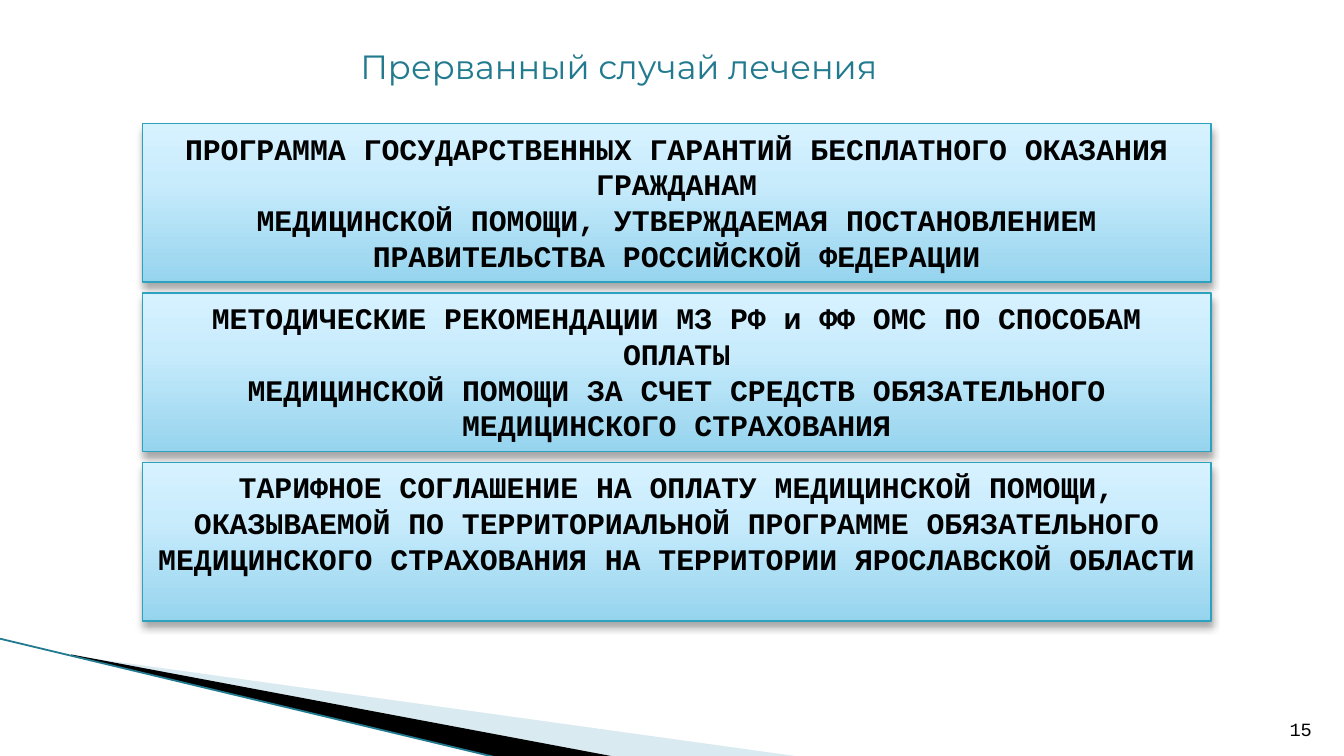
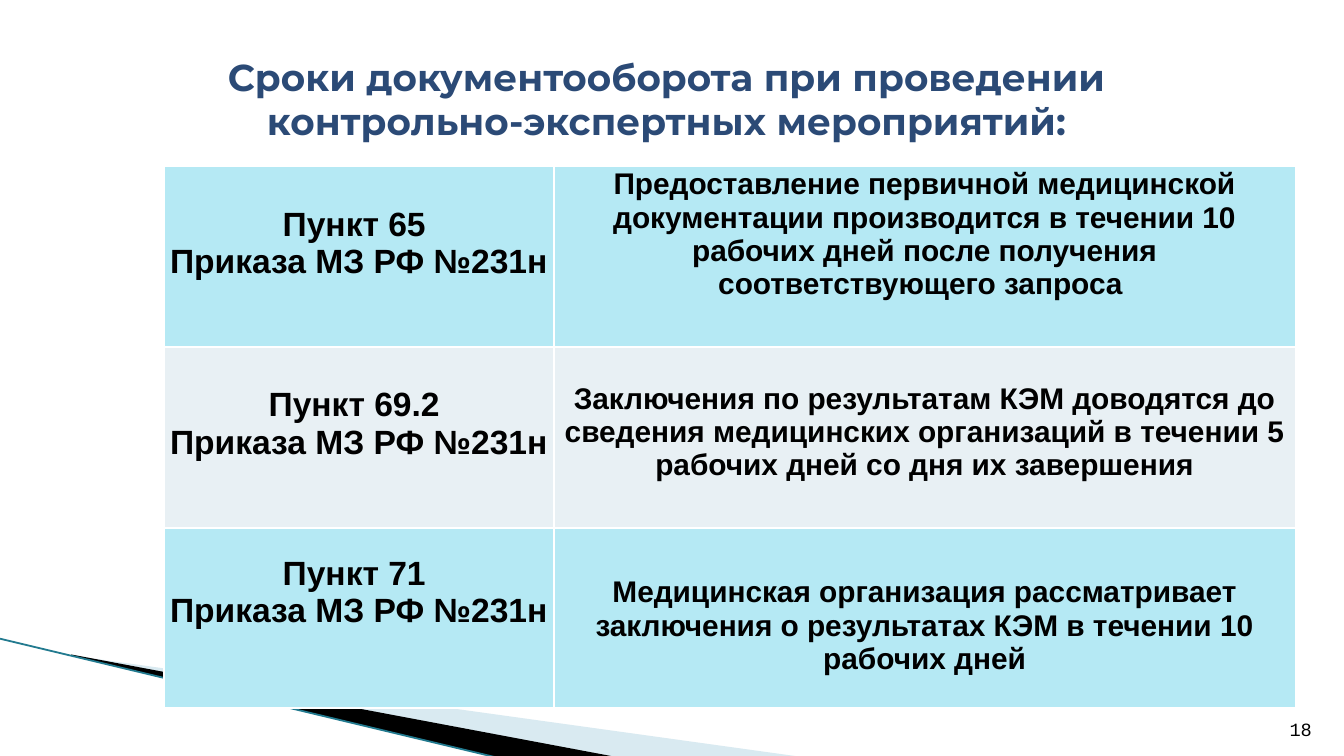
from copy import deepcopy

from lxml import etree
from pptx import Presentation
from pptx.dml.color import RGBColor
from pptx.enum.shapes import MSO_CONNECTOR, MSO_SHAPE
from pptx.enum.text import MSO_ANCHOR, MSO_AUTO_SIZE, PP_ALIGN
from pptx.oxml.ns import qn
from pptx.util import Inches, Pt

CENTER, RIGHT = PP_ALIGN.CENTER, PP_ALIGN.RIGHT
TOP, BOTTOM = MSO_ANCHOR.TOP, MSO_ANCHOR.BOTTOM
NO_AUTOFIT = MSO_AUTO_SIZE.NONE
RECTANGLE = MSO_SHAPE.RECTANGLE
STRAIGHT = MSO_CONNECTOR.STRAIGHT

BLACK, WHITE = "000000", "FFFFFF"
TEAL, NAVY = "227A8F", "2B4A76"
BAND_PALE, BOX_LINE = "A0CBDC", "2DA2BF"
BOX_GRADIENT = [(0, "96D4EE"), (0.65, "C9ECFC"), (1, "D7F2FF")]
ROW_FILLS = ["B5E9F4", "E8F0F4"]
HEADING_FONT, MONO_FONT, TABLE_FONT = "Montserrat", "Courier New", "Arial"

PALE_WEDGE = [(0.55, 4.88), (5.95, 5.63), (4.56, 5.63)]
BLACK_WEDGE = [(0.53, 4.87), (4.57, 5.63), (3.72, 5.64), (0.54, 4.88)]

DOCUMENTS = [
    "ПРОГРАММА ГОСУДАРСТВЕННЫХ ГАРАНТИЙ БЕСПЛАТНОГО ОКАЗАНИЯ ГРАЖДАНАМ\n"
    "МЕДИЦИНСКОЙ ПОМОЩИ, УТВЕРЖДАЕМАЯ ПОСТАНОВЛЕНИЕМ ПРАВИТЕЛЬСТВА РОССИЙСКОЙ ФЕДЕРАЦИИ",
    "МЕТОДИЧЕСКИЕ РЕКОМЕНДАЦИИ МЗ РФ и ФФ ОМС ПО СПОСОБАМ ОПЛАТЫ\n"
    "МЕДИЦИНСКОЙ ПОМОЩИ ЗА СЧЕТ СРЕДСТВ ОБЯЗАТЕЛЬНОГО\n"
    "МЕДИЦИНСКОГО СТРАХОВАНИЯ",
    "ТАРИФНОЕ СОГЛАШЕНИЕ НА ОПЛАТУ МЕДИЦИНСКОЙ ПОМОЩИ, ОКАЗЫВАЕМОЙ ПО "
    "ТЕРРИТОРИАЛЬНОЙ ПРОГРАММЕ ОБЯЗАТЕЛЬНОГО МЕДИЦИНСКОГО СТРАХОВАНИЯ "
    "НА ТЕРРИТОРИИ ЯРОСЛАВСКОЙ ОБЛАСТИ",
]

DEADLINES = [
    ("65", 0.29, "Предоставление первичной медицинской документации производится "
     "в течении 10 рабочих дней после получения соответствующего запроса ", 0.01),
    ("69.2", 0.29, "Заключения по результатам КЭМ доводятся до сведения медицинских "
     "организаций в течении 5 рабочих дней со дня их завершения", 0.26),
    ("71", 0.2, "Медицинская организация рассматривает заключения о результатах "
     "КЭМ в течении 10 рабочих дней", 0.36),
]


def color(value):
    return RGBColor.from_string(value)


def add_element(parent, tag, **attributes):
    return etree.SubElement(parent, qn(tag), attributes)


def set_text(frame, text, font, size, ink=BLACK, bold=False, align=CENTER):
    frame.text = text
    frame.word_wrap = True
    for paragraph in frame.paragraphs:
        paragraph.alignment = align
        for span in paragraph.runs:
            span.font.name = font
            span.font.size = Pt(size)
            span.font.bold = bold
            span.font.color.rgb = color(ink)


def add_wedge(page, points, fill, alpha=None):
    corners = [(Inches(x), Inches(y)) for x, y in points]
    builder = page.shapes.build_freeform(*corners[0])
    builder.add_line_segments(corners[1:], close=True)
    wedge = builder.convert_to_shape()
    wedge.shadow.inherit = False
    wedge.fill.solid()
    wedge.fill.fore_color.rgb = color(fill)
    wedge.line.fill.background()
    if alpha:
        tint = wedge.element.spPr.find(".//" + qn("a:srgbClr"))
        add_element(tint, "a:alpha", val=str(alpha * 1000))
    return wedge


def add_band_edge(page):
    edge = page.shapes.add_connector(
        STRAIGHT, Inches(-0.01), Inches(4.75), Inches(3.71), Inches(5.64))
    edge.line.color.rgb = color(TEAL)
    edge.line.width = Pt(0.95)
    add_element(edge.element.spPr, "a:effectLst")
    return edge


def move_band_to_layout(page):
    band = [add_wedge(page, PALE_WEDGE, BAND_PALE, 40),
            add_wedge(page, BLACK_WEDGE, BLACK),
            add_band_edge(page)]
    for piece in band:
        page.slide_layout.shapes.element.append(piece.element)


def add_page(deck, layout, number):
    page = deck.slides.add_slide(layout)
    box = page.shapes.add_textbox(Inches(9.46), Inches(5.26), Inches(0.4), Inches(0.3))
    set_text(box.text_frame, number, MONO_FONT, 10, align=RIGHT)
    box.text_frame.vertical_anchor = BOTTOM
    return page


def set_title(page, text, place, size, ink, bold=False):
    title = page.shapes.title
    title.left, title.top, title.width, title.height = map(Inches, place)
    set_text(title.text_frame, text, HEADING_FONT, size, ink, bold)
    title.text_frame.auto_size = NO_AUTOFIT
    title.text_frame.vertical_anchor = TOP


def fill_gradient(shape):
    shape.fill.gradient()
    shape.fill.gradient_angle = 90
    stops = shape.element.spPr.find(".//" + qn("a:gsLst"))
    stops.append(deepcopy(stops[0]))
    for stop, (position, value) in zip(shape.fill.gradient_stops, BOX_GRADIENT):
        stop.position = position
        stop.color.rgb = color(value)


def add_drop_shadow(shape):
    shape.shadow.inherit = False
    effects = shape.element.spPr.find(qn("a:effectLst"))
    shadow = add_element(effects, "a:outerShdw", blurRad=str(Pt(4)), dist=str(Pt(3)),
                         dir="5400000", rotWithShape="0")
    tint = add_element(shadow, "a:srgbClr", val=BLACK)
    add_element(tint, "a:alpha", val="35000")


def add_document_box(page, top, text):
    box = page.shapes.add_shape(
        RECTANGLE, Inches(1.06), Inches(top), Inches(7.95), Inches(1.18))
    fill_gradient(box)
    box.line.color.rgb = color(BOX_LINE)
    box.line.width = Pt(0.75)
    add_drop_shadow(box)
    set_text(box.text_frame, text, MONO_FONT, 16, bold=True)
    box.text_frame.vertical_anchor = TOP


def set_cell(cell, text, size, fill, top):
    set_text(cell.text_frame, text, TABLE_FONT, size, bold=True)
    cell.margin_left = cell.margin_right = Inches(0.01)
    cell.margin_top, cell.margin_bottom = Inches(top), 0
    cell.vertical_anchor = TOP
    cell.fill.solid()
    cell.fill.fore_color.rgb = color(fill)
    properties = cell.text_frame._txBody.getparent().find(qn("a:tcPr"))
    for index, side in enumerate("LRTB"):
        border = add_element(properties, "a:ln" + side, w=str(Pt(1)))
        add_element(add_element(border, "a:solidFill"), "a:srgbClr", val=WHITE)
        properties.insert(index, border)


def add_deadline_table(page):
    table = page.shapes.add_table(
        len(DEADLINES), 2, Inches(1.22), Inches(1.24), Inches(8.42), Inches(4.03)).table
    table.first_row = table.horz_banding = False
    table.columns[0].width, table.columns[1].width = Inches(2.9), Inches(5.52)
    for index, (clause, clause_top, rule, rule_top) in enumerate(DEADLINES):
        fill = ROW_FILLS[index % 2]
        order = f"Пункт {clause} \nПриказа МЗ РФ №231н"
        set_cell(table.cell(index, 0), order, 18, fill, clause_top)
        set_cell(table.cell(index, 1), rule, 16, fill, rule_top)


def main():
    deck = Presentation()
    deck.slide_width = Inches(10)
    deck.slide_height = deck.slide_width * 9 // 16
    layout = deck.slide_layouts[5]
    for holder in list(layout.placeholders)[1:]:
        layout.shapes.element.remove(holder.element)

    page = add_page(deck, layout, "15")
    move_band_to_layout(page)
    set_title(page, "Прерванный случай лечения", (2.4, 0.29, 4.41, 0.4), 18, TEAL)
    for index, text in enumerate(DOCUMENTS):
        add_document_box(page, 0.92 + 1.26 * index, text)

    page = add_page(deck, layout, "18")
    set_title(page, "Сроки документооборота при проведении контрольно-экспертных мероприятий:",
              (1.3, 0.35, 7.32, 0.77), 20, NAVY, bold=True)
    add_deadline_table(page)

    deck.save("out.pptx")


if __name__ == "__main__":
    main()
